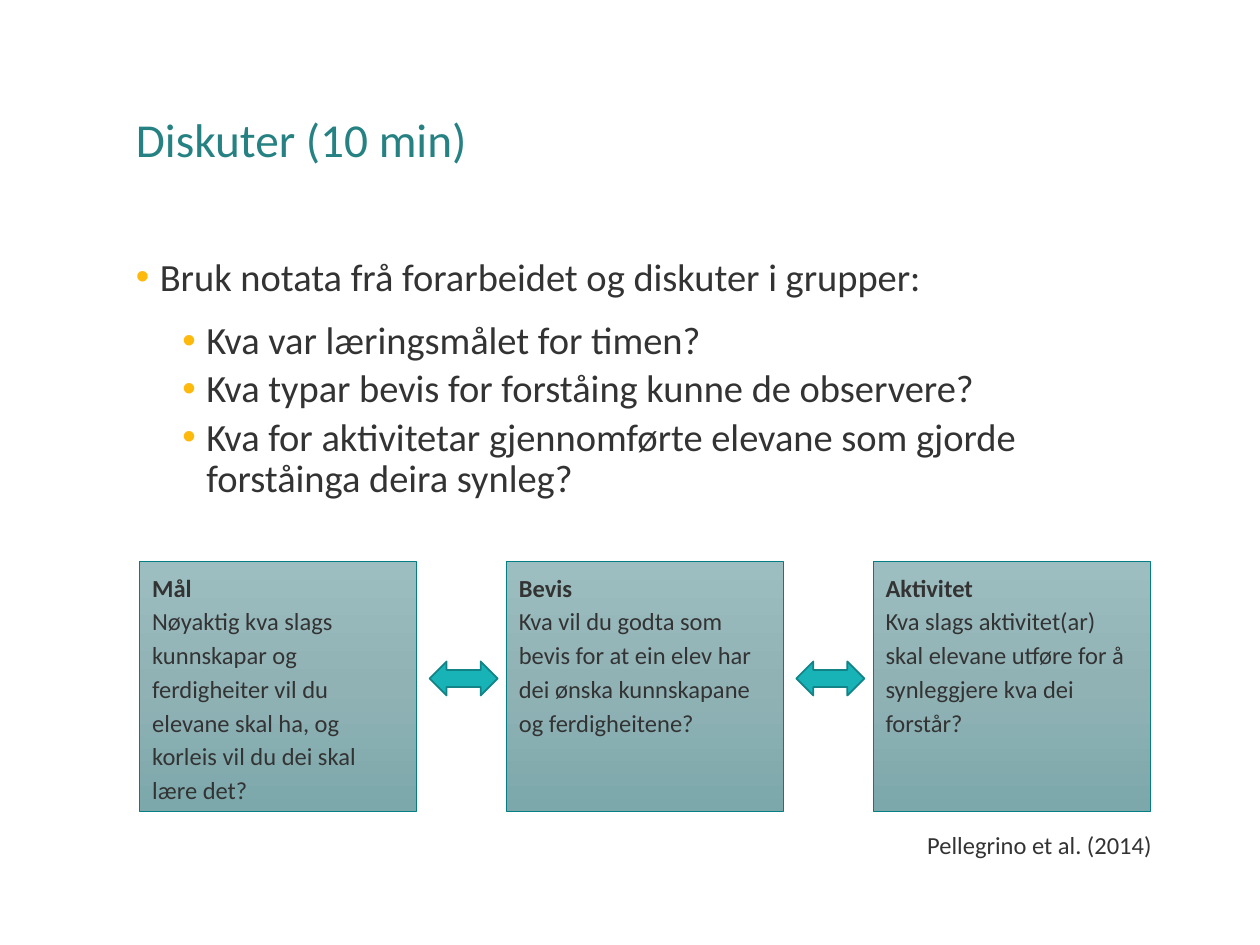
from copy import deepcopy

from lxml import etree
from pptx import Presentation
from pptx import util as u
from pptx.dml.color import RGBColor
from pptx.enum import shapes, text
from pptx.oxml.ns import qn

FONT = "Calibri"
DARK, TEAL, YELLOW = "333333", "268183", "FDB90C"
CARD_GRADIENT = [(0, "9DBEC0"), (0.5, "90B2B5"), (1, "7CA8AB")]

TITLE = "Diskuter (10 min)"
# text, left indent (inches), space before (points)
BULLETS = [
    ("Bruk notata frå forarbeidet og diskuter i grupper:", 0.19, 0),
    ("Kva var læringsmålet for timen?", 0.56, 12.4),
    ("Kva typar bevis for forståing kunne de observere?", 0.56, 3.8),
    ("Kva for aktivitetar gjennomførte elevane som gjorde forståinga deira synleg?", 0.56, 3.8),
]
CARDS = [
    ("Mål", "Nøyaktig kva slags kunnskapar og ferdigheiter vil du elevane skal ha, "
            "og korleis vil du dei skal lære det?"),
    ("Bevis", "Kva vil du godta som bevis for at ein elev har dei ønska kunnskapane "
              "og ferdigheitene?"),
    ("Aktivitet", "Kva slags aktivitet(ar) skal elevane utføre for å synleggjere kva dei forstår?"),
]
SOURCE = "Pellegrino et al. (2014)"

CARD_LEFT, CARD_TOP, CARD_WIDTH, CARD_HEIGHT, CARD_PITCH = 1.11, 4.46, 2.2, 1.98, 2.91
ARROW_TOP, ARROW_WIDTH, ARROW_HEIGHT, ARROW_GAP = 5.25, 0.54, 0.27, 0.1


def rgb(value):
    return RGBColor.from_string(value)


def inches(*lengths):
    return [u.Inches(length) for length in lengths]


def add_bullet(paragraph, indent):
    """Give the paragraph a yellow bullet hanging left of the indent."""
    props = paragraph._p.get_or_add_pPr()
    props.set("marL", str(u.Inches(indent)))
    props.set("indent", str(-u.Inches(0.19)))
    colour = etree.SubElement(props, qn("a:buClr"))
    etree.SubElement(colour, qn("a:srgbClr"), val=YELLOW)
    etree.SubElement(props, qn("a:buFont"), typeface="Arial")
    etree.SubElement(props, qn("a:buChar"), char="•")


def write(frame, words, size=14, colour=DARK, bold=False, spacing=1.0, before=0, indent=None):
    """Add one paragraph, using the first one while it is still empty."""
    first = frame.paragraphs[0]
    paragraph = frame.add_paragraph() if first.runs else first
    paragraph.alignment = text.PP_ALIGN.LEFT
    paragraph.line_spacing = spacing
    if before:
        paragraph.space_before = u.Pt(before)
    if indent is not None:
        add_bullet(paragraph, indent)
    run = paragraph.add_run()
    run.text = words
    run.font.name, run.font.size, run.font.bold = FONT, u.Pt(size), bold
    run.font.color.rgb = rgb(colour)


def add_frame(slide, box, anchor=text.MSO_ANCHOR.TOP):
    frame = slide.shapes.add_textbox(*inches(*box)).text_frame
    frame.word_wrap = True
    frame.vertical_anchor = anchor
    return frame


def add_outlined(slide, preset, box, line_colour, line_width):
    shape = slide.shapes.add_shape(preset, *inches(*box))
    shape.shadow.inherit = False
    shape.line.color.rgb = rgb(line_colour)
    shape.line.width = u.Pt(line_width)
    return shape


def fill_gradient(shape, stops):
    """Fill from top to bottom through three colour stops."""
    shape.fill.gradient()
    shape.fill.gradient_angle = 270
    stop_list = shape._element.spPr.find(".//" + qn("a:gsLst"))
    stop_list.insert(1, deepcopy(stop_list[0]))
    for stop, (position, colour) in zip(shape.fill.gradient_stops, stops):
        stop.position = position
        stop.color.rgb = rgb(colour)


def add_card(slide, left, heading, question):
    card = add_outlined(slide, shapes.MSO_SHAPE.RECTANGLE,
                        (left, CARD_TOP, CARD_WIDTH, CARD_HEIGHT), "037F83", 0.5)
    fill_gradient(card, CARD_GRADIENT)
    frame = card.text_frame
    frame.word_wrap = True
    frame.vertical_anchor = text.MSO_ANCHOR.TOP
    write(frame, heading, bold=True, spacing=1.15)
    write(frame, question, spacing=1.15)


def add_arrow(slide, left):
    arrow = add_outlined(slide, shapes.MSO_SHAPE.LEFT_RIGHT_ARROW,
                         (left, ARROW_TOP, ARROW_WIDTH, ARROW_HEIGHT), "128487", 1)
    arrow.fill.solid()
    arrow.fill.fore_color.rgb = rgb("18B3B7")


def main():
    deck = Presentation()
    deck.slide_width, deck.slide_height = inches(10, 7.5)
    slide = deck.slides.add_slide(deck.slide_layouts[6])

    title = add_frame(slide, (0.98, 0.4, 8.29, 1.45), text.MSO_ANCHOR.MIDDLE)
    write(title, TITLE, size=27, colour=TEAL, spacing=0.9)

    body = add_frame(slide, (0.98, 2, 8.29, 2.3))
    for words, indent, before in BULLETS:
        write(body, words, size=22, spacing=0.9, before=before, indent=indent)

    for index, (heading, question) in enumerate(CARDS):
        left = CARD_LEFT + index * CARD_PITCH
        add_card(slide, left, heading, question)
        if index < len(CARDS) - 1:
            add_arrow(slide, left + CARD_WIDTH + ARROW_GAP)

    write(add_frame(slide, (7.26, 6.54, 2.02, 0.34)), SOURCE)
    deck.save("out.pptx")


if __name__ == "__main__":
    main()
